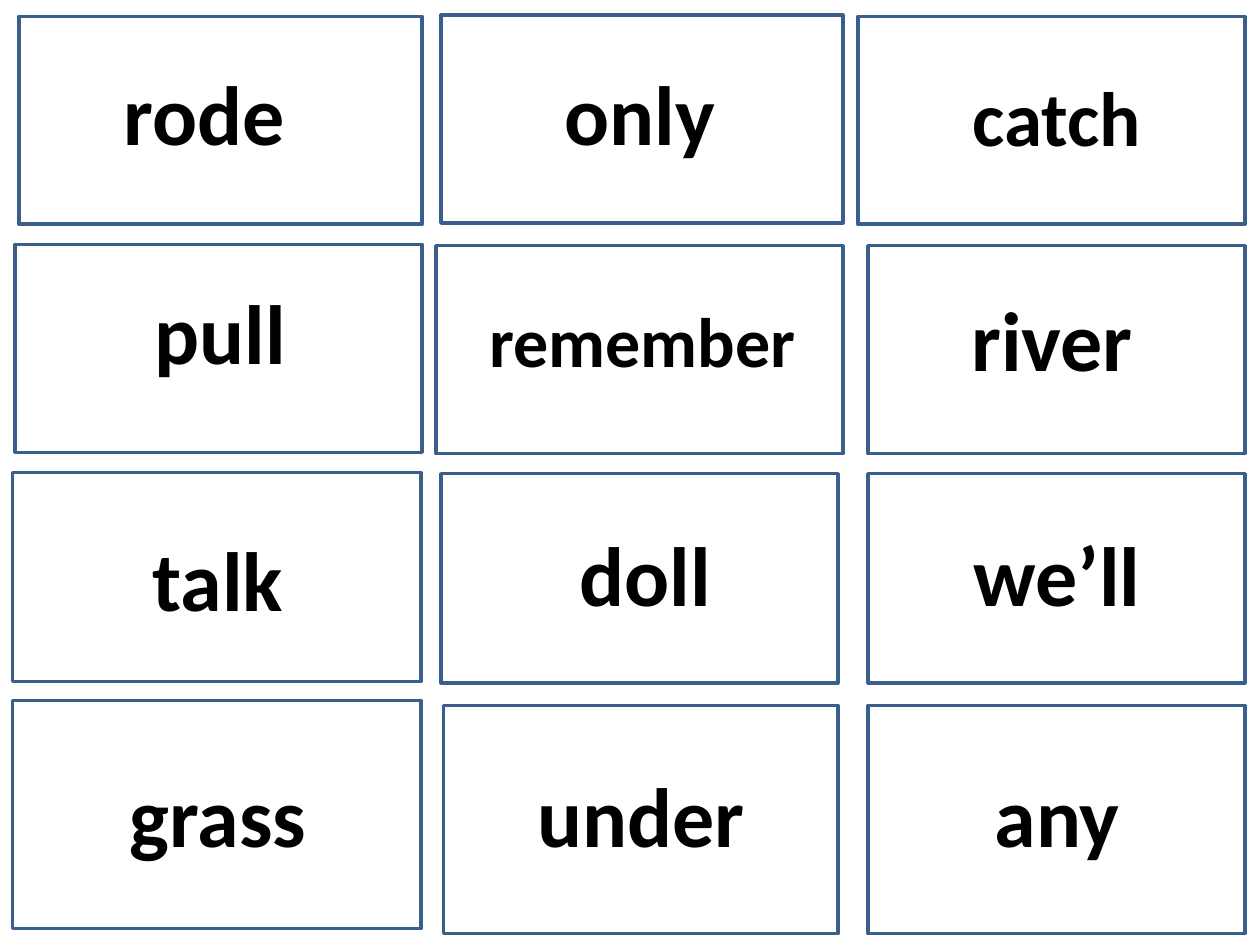
from dataclasses import dataclass

from pptx import Presentation
from pptx.dml.color import RGBColor
from pptx.enum.shapes import MSO_SHAPE
from pptx.enum.text import MSO_AUTO_SIZE, PP_ALIGN
from pptx.util import Inches, Pt

RECT = MSO_SHAPE.RECTANGLE
CENTER = PP_ALIGN.CENTER
GROW = MSO_AUTO_SIZE.SHAPE_TO_FIT_TEXT


@dataclass(frozen=True)
class Theme:
    font: str = "Calibri"
    ink: RGBColor = RGBColor(0, 0, 0)
    edge: RGBColor = RGBColor(0x3A, 0x5F, 0x8C)
    line: float = 2
    large: int = 48
    medium: int = 44
    small: int = 40


class Deck:
    """Holds the theme and the current slide."""

    def __init__(self, theme):
        self.theme = theme
        self.prs = Presentation()
        self.prs.slide_width = Inches(10)
        self.prs.slide_height = Inches(7.5)
        self.slide = self.prs.slides.add_slide(self.prs.slide_layouts[6])

    def card(self, *box):
        shape = self.slide.shapes.add_shape(RECT, *map(Inches, box))
        shape.shadow.inherit = False
        shape.fill.background()
        shape.line.color.rgb = self.theme.edge
        shape.line.width = Pt(self.theme.line)

    def word(self, text, left, top, size):
        # One line of type plus the top and bottom insets
        high = round(size / 72 * 1.22 + 0.1, 2)
        box = self.slide.shapes.add_textbox(
            Inches(left), Inches(top), Inches(WIDE), Inches(high))
        frame = box.text_frame
        frame.word_wrap = True
        frame.auto_size = GROW
        para = frame.paragraphs[0]
        para.alignment = CENTER
        run = para.add_run()
        run.text = text
        font = run.font
        font.name = self.theme.font
        font.size = Pt(size)
        font.bold = True
        font.color.rgb = self.theme.ink


THEME = Theme()
WIDE = 2.68  # width of every word box

# Card height for each row
HIGH = [1.65, 1.65, 1.66, 1.81]

# Row by row: card left, top, width; then word, left, top, size
ROWS = [
    [((0.15, 0.13, 3.2), ("rode", 0.28, 0.44, THEME.large)),
     ((3.5, 0.12, 3.19), ("only", 3.74, 0.44, THEME.large)),
     ((6.81, 0.13, 3.07), ("catch", 7.05, 0.5, THEME.medium))],
    [((0.12, 1.94, 3.23), ("pull", 0.41, 2.18, THEME.large)),
     ((3.46, 1.95, 3.23), ("remember", 3.76, 2.31, THEME.small)),
     ((6.89, 1.95, 2.99), ("river", 7.01, 2.23, THEME.large))],
    [((0.1, 3.75, 3.24), ("talk", 0.39, 4.14, THEME.large)),
     ((3.5, 3.76, 3.15), ("doll", 3.78, 4.1, THEME.large)),
     ((6.89, 3.76, 2.99), ("we’ll", 7.05, 4.1, THEME.large))],
    [((0.1, 5.56, 3.24), ("grass", 0.39, 6.01, THEME.large)),
     ((3.52, 5.6, 3.13), ("under", 3.75, 6.01, THEME.large)),
     ((6.89, 5.6, 2.99), ("any", 7.05, 6.01, THEME.large))],
]


def main():
    deck = Deck(THEME)
    # Word cards, each frame below its word
    for high, row in zip(HIGH, ROWS):
        for card, word in row:
            deck.card(*card, high)
            deck.word(*word)
    deck.prs.save("out.pptx")


if __name__ == "__main__":
    main()
